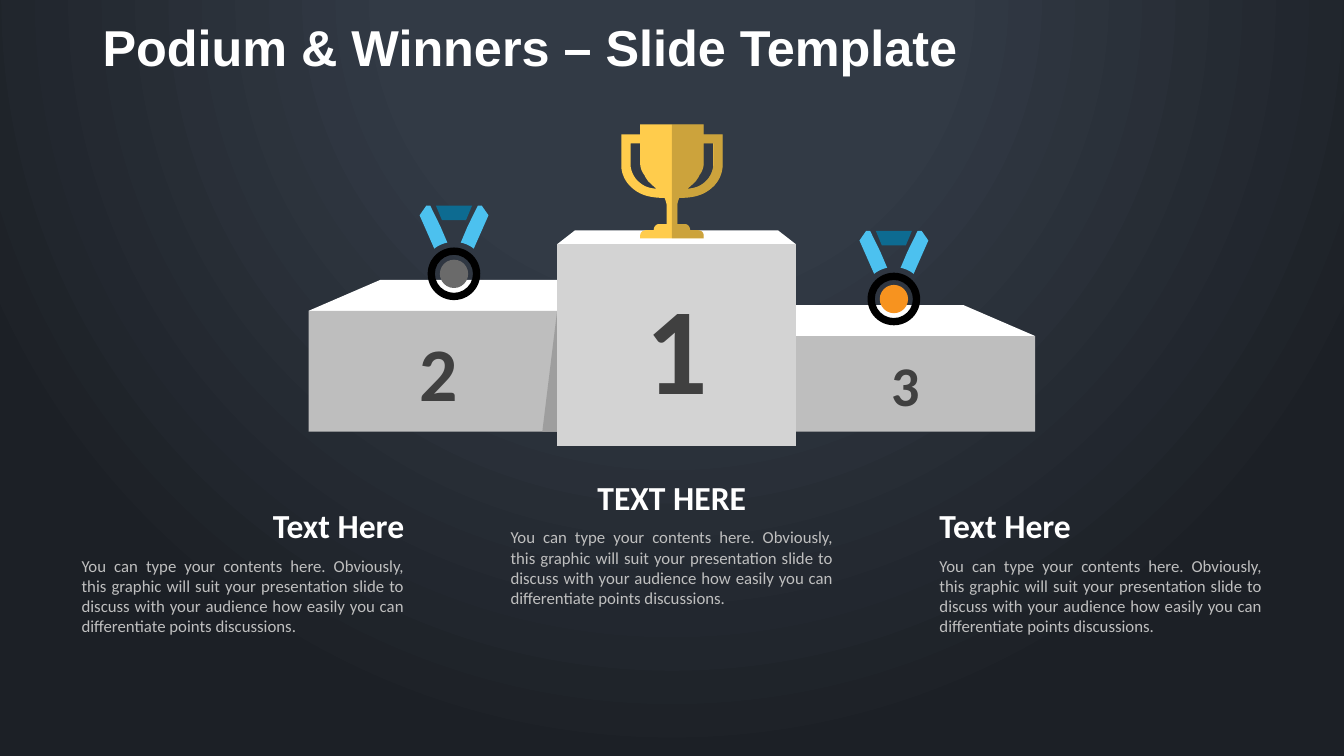
from pptx import Presentation
from pptx.dml.color import RGBColor
from pptx.enum.shapes import MSO_SHAPE
from pptx.enum.text import MSO_ANCHOR, MSO_AUTO_SIZE, PP_ALIGN
from pptx.oxml import parse_xml
from pptx.oxml.ns import nsdecls
from pptx.util import Pt

RECTANGLE, TRAPEZOID = MSO_SHAPE.RECTANGLE, MSO_SHAPE.TRAPEZOID
TRIANGLE, OVAL, DONUT = MSO_SHAPE.RIGHT_TRIANGLE, MSO_SHAPE.OVAL, MSO_SHAPE.DONUT
TOP, MIDDLE, BOTTOM = MSO_ANCHOR.TOP, MSO_ANCHOR.MIDDLE, MSO_ANCHOR.BOTTOM
LEFT, CENTER, RIGHT, JUSTIFY = PP_ALIGN.LEFT, PP_ALIGN.CENTER, PP_ALIGN.RIGHT, PP_ALIGN.JUSTIFY
FIT_SHAPE = MSO_AUTO_SIZE.SHAPE_TO_FIT_TEXT

TITLE = "Podium & Winners – Slide Template"
BODY = ("You can type your contents here. Obviously, this graphic will suit your "
        "presentation slide to discuss with your audience how easily you can "
        "differentiate points discussions.")
CAPTIONS = [("Text Here", RIGHT, 357.1), ("TEXT HERE", CENTER, 337), ("Text Here", LEFT, 357.1)]
CAPTION_LEFT, CAPTION_STEP, CAPTION_WIDTH = 58.3, 306.4, 230.4
HEADING_HEIGHT, BODY_HEIGHT = 36, 65.5

BACKGROUND_STOPS = [(0, "323A45"), (35, "323A45"), (100, "1C2026")]
TOPS = {
    "second": (220.5, 200, 251, 22, 2.318),
    "third": (488.3, 218, 251, 22, 2.318),
    "first": (397.9, 164.6, 170.7, 9.9, 1.287),
}
BLOCKS = {
    "second": ("2", 220.5, 222, 185.7, 86.4, 54, "BEBEBE"),
    "third": ("3", 553.9, 240, 185.5, 68.4, 40, "BEBEBE"),
    "first": ("1", 397.9, 174.4, 170.7, 144.2, 88, "D3D3D3"),
}
SHADE = (387.4, 222, 10.6, 86.4)

MEDALS = [(324.3, 195.6, "6A6A6A"), (638.5, 213.6, "F7931F")]
RING_SIZE, RING_BAND, DISC_SIZE = 37.6, 5.2, 20.2
STRAP = [(4.8, -22.3), (8.4, -21.6, 11.2, -20.2, 14.1, -18),
         (24.6, -41.8), (19.8, -48.7), (17, -48.7), (9.7, -33.8)]
RIBBON_BAND = [(8.6, -38.4), (12.9, -48.7), (-12.9, -48.7), (-8.6, -38.4)]

CUP_CENTER, CUP_TOP = 480, 88.8
CUP_HALF = [(0, 0), (22.7, 0), (22.7, 7.2), (36.2, 7.2), (36.2, 29.5),
            (36.2, 30.2, 36.2, 37.4, 30.4, 43.6), (24.6, 49.7, 17.5, 52.6, 5.2, 52.6),
            (4.5, 54.7, 3.8, 56.2, 3.8, 58.3), (3.8, 71.3), (9.4, 71.3),
            (11.5, 71.3, 13, 73.4, 13, 75.6), (18, 75.6),
            (20.9, 75.6, 22.7, 77, 22.7, 79.9), (22.7, 81.4), (0, 81.4)]
HANDLE_GAP = [(22.7, 13.7), (22.7, 27.4), (22.7, 31, 21.6, 33.8, 19.4, 36.7),
              (19.4, 37.4, 18, 38.9, 17.3, 40.3), (15.1, 42.5, 13, 44.6, 10.8, 46.1),
              (18.7, 45.4, 21.6, 43.2, 25.2, 39.6), (29.5, 34.6, 29.5, 29.5, 29.5, 29.5),
              (29.5, 13.7)]

presentation = Presentation()
presentation.slide_width, presentation.slide_height = Pt(960), Pt(540)
slide = presentation.slides.add_slide(presentation.slide_layouts[6])
shapes = slide.shapes


def color(hex_string):
    return RGBColor.from_string(hex_string)


def paint(shape, fill):
    shape.shadow.inherit = False
    shape.fill.solid()
    shape.fill.fore_color.rgb = color(fill)
    shape.line.fill.background()
    return shape


def add_preset(kind, left, top, width, height, fill, adjustment=None):
    shape = paint(shapes.add_shape(kind, Pt(left), Pt(top), Pt(width), Pt(height)), fill)
    if adjustment is not None:
        shape.adjustments[0] = adjustment
    return shape


def write(shape, text, size, fill, font="Calibri", bold=False, align=LEFT,
          anchor=TOP, inset=0, spacing=None, fit=None):
    frame = shape.text_frame
    frame.word_wrap = True
    frame.margin_left, frame.margin_right = Pt(inset), 0
    frame.margin_top = frame.margin_bottom = Pt(3.6)
    frame.vertical_anchor = anchor
    if fit is not None:
        frame.auto_size = fit
    paragraph = frame.paragraphs[0]
    paragraph.alignment = align
    if spacing:
        paragraph.line_spacing = spacing
    run = paragraph.add_run()
    run.text = text
    run.font.name, run.font.size, run.font.bold = font, Pt(size), bold
    run.font.color.rgb = color(fill)


def add_text(left, top, width, height, text, **text_format):
    write(shapes.add_textbox(Pt(left), Pt(top), Pt(width), Pt(height)), text, **text_format)


def flatten(outline, steps=10):
    points = []
    for item in outline:
        if len(item) == 2:
            points.append(item)
            continue
        x0, y0 = points[-1]
        x1, y1, x2, y2, x3, y3 = item
        for step in range(1, steps + 1):
            t = step / steps
            u = 1 - t
            points.append((u**3 * x0 + 3 * u * u * t * x1 + 3 * u * t * t * x2 + t**3 * x3,
                           u**3 * y0 + 3 * u * u * t * y1 + 3 * u * t * t * y2 + t**3 * y3))
    return points


def mirror(points):
    return [(-x, y) for x, y in reversed(points)]


def add_outline(contours, center, top, fill):
    builder = None
    for contour in contours:
        points = [(Pt(center + x), Pt(top + y)) for x, y in contour]
        if builder is None:
            builder = shapes.build_freeform(*points[0])
        else:
            builder.move_to(*points[0])
        builder.add_line_segments(points[1:], close=True)
    return paint(builder.convert_to_shape(), fill)


def add_background():
    stops = "".join(f'<a:gs pos="{position * 1000}"><a:srgbClr val="{fill}"/></a:gs>'
                    for position, fill in BACKGROUND_STOPS)
    slide.element.cSld.insert(0, parse_xml(
        f'<p:bg {nsdecls("p", "a")}><p:bgPr><a:gradFill><a:gsLst>{stops}</a:gsLst>'
        '<a:path path="circle"><a:fillToRect l="50000" t="-80000" r="50000" b="180000"/>'
        '</a:path></a:gradFill><a:effectLst/></p:bgPr></p:bg>'))


def add_block(place):
    numeral, left, top, width, height, size, fill = BLOCKS[place]
    block = add_preset(RECTANGLE, left, top, width, height, fill)
    write(block, numeral, size=size, fill="404040", bold=True, align=CENTER, anchor=MIDDLE)


def add_podium():
    for place in ("second", "third"):
        *box, slant = TOPS[place]
        add_preset(TRAPEZOID, *box, "FFFFFF", slant)
    for place in ("second", "third"):
        add_block(place)
    *box, slant = TOPS["first"]
    add_preset(TRAPEZOID, *box, "FFFFFF", slant)
    shade = add_preset(TRIANGLE, *SHADE, "9E9E9E")
    shade.element.spPr.xfrm.set("flipH", "1")
    add_block("first")


def add_medal(x, y, fill):
    for kind, size, disc_fill, adjustment in ((OVAL, DISC_SIZE, fill, None),
                                              (DONUT, RING_SIZE, "000000", RING_BAND / RING_SIZE)):
        add_preset(kind, x - size / 2, y - size / 2, size, size, disc_fill, adjustment)
    strap = flatten(STRAP)
    for points, ribbon_fill in ((strap, "4CC1EF"), (mirror(strap), "4CC1EF"),
                                (RIBBON_BAND, "0D6B91")):
        add_outline([points], x, y, ribbon_fill)


def add_trophy():
    half, gap = flatten(CUP_HALF), flatten(HANDLE_GAP)
    add_outline([half + mirror(half), gap, mirror(gap)], CUP_CENTER, CUP_TOP, "FFCC4C")
    shade = add_outline([half, gap], CUP_CENTER, CUP_TOP, "000000")
    shade_color = shade.element.spPr.find(".//{*}solidFill/{*}srgbClr")
    shade_color.append(parse_xml(f'<a:alpha {nsdecls("a")} val="20000"/>'))


add_background()
add_podium()
add_text(66.2, 13, 828, 58.3, TITLE, size=36, fill="FFFFFF", font="Arial", bold=True,
         inset=7.2, spacing=0.9)
for medal in MEDALS:
    add_medal(*medal)
add_trophy()
for index, (heading, align, top) in enumerate(CAPTIONS):
    left = CAPTION_LEFT + index * CAPTION_STEP
    add_text(left, top, CAPTION_WIDTH, HEADING_HEIGHT, heading, size=24, fill="FFFFFF",
             bold=True, align=align, anchor=BOTTOM, fit=FIT_SHAPE)
    add_text(left, top + HEADING_HEIGHT, CAPTION_WIDTH, BODY_HEIGHT, BODY, size=12,
             fill="BFBFBF", align=JUSTIFY, fit=FIT_SHAPE)
presentation.save("out.pptx")
